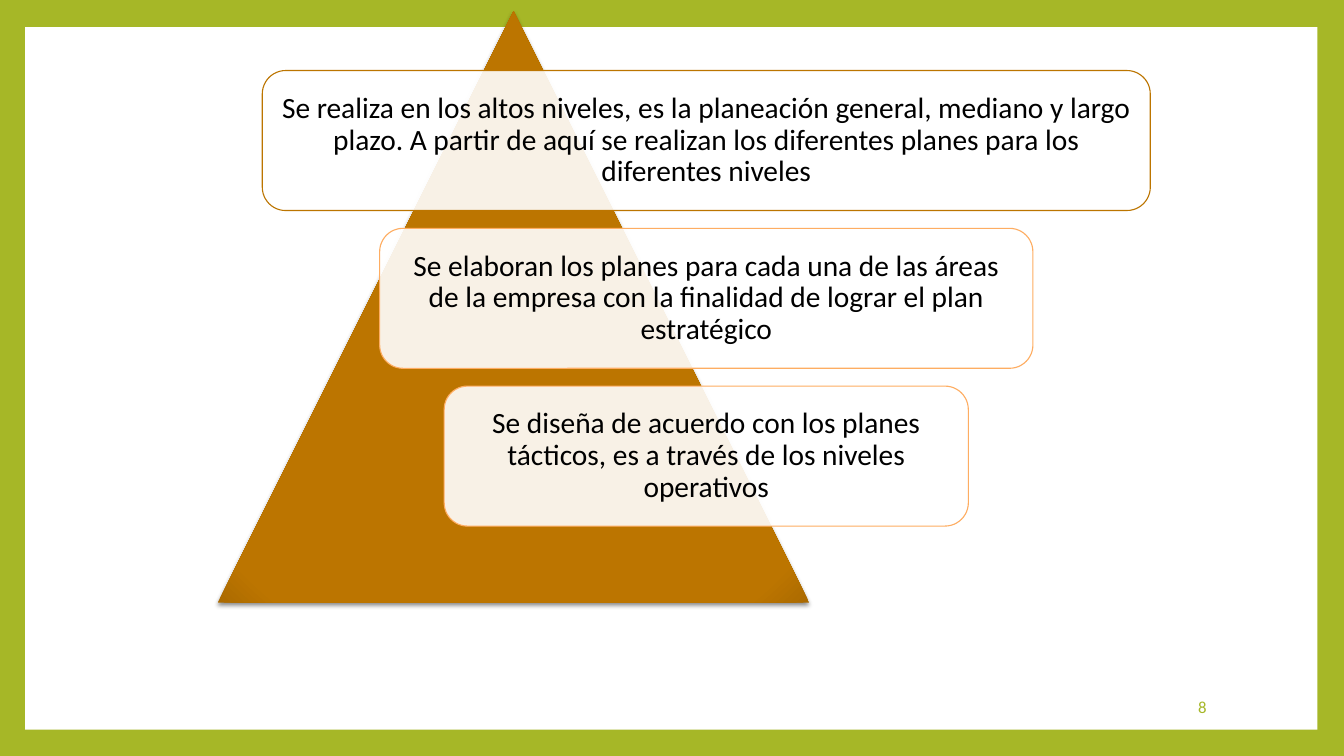
from lxml import etree
from pptx import Presentation
from pptx.dml.color import RGBColor
from pptx.enum.shapes import MSO_SHAPE
from pptx.enum.text import MSO_ANCHOR, PP_ALIGN
from pptx.oxml import parse_xml
from pptx.oxml.ns import qn
from pptx.util import Pt

RECTANGLE = MSO_SHAPE.RECTANGLE
TRIANGLE = MSO_SHAPE.ISOSCELES_TRIANGLE
ROUNDED = MSO_SHAPE.ROUNDED_RECTANGLE
MIDDLE = MSO_ANCHOR.MIDDLE
CENTER, RIGHT = PP_ALIGN.CENTER, PP_ALIGN.RIGHT

FONT = "Calibri"
GREEN, WHITE, BLACK = "A6B727", "FFFFFF", "000000"
BROWN, DARK_BROWN, ORANGE = "BC7500", "AB6A00", "FEAD62"
A_NS = 'xmlns:a="http://schemas.openxmlformats.org/drawingml/2006/main"'

# Planning levels: text, box width, outline
LEVELS = [
    ("Se realiza en los altos niveles, es la planeación general, mediano y "
     "largo plazo. A partir de aquí se realizan los diferentes planes para "
     "los diferentes niveles", 634.3, BROWN),
    ("Se elaboran los planes para cada una de las áreas de la empresa con la "
     "finalidad de lograr el plan estratégico", 466.6, ORANGE),
    ("Se diseña de acuerdo con los planes tácticos, es a través de los "
     "niveles operativos", 374.4, ORANGE),
]
LEVELS_CENTER, LEVELS_TOP = 504.5, 50.4
LEVEL_HEIGHT, LEVEL_PITCH = 100, 112.7


def color(hex_code):
    return RGBColor.from_string(hex_code)


def add_filled(slide, preset, left, top, width, height, fill):
    shape = slide.shapes.add_shape(
        preset, Pt(left), Pt(top), Pt(width), Pt(height))
    shape.shadow.inherit = False
    shape.fill.solid()
    shape.fill.fore_color.rgb = color(fill)
    shape.line.fill.background()
    return shape


def write(frame, text, size, hex_code, alignment):
    frame.word_wrap = True
    frame.vertical_anchor = MIDDLE
    frame.text = text
    paragraph = frame.paragraphs[0]
    paragraph.alignment = alignment
    font = paragraph.runs[0].font
    font.name, font.size = FONT, Pt(size)
    font.color.rgb = color(hex_code)
    return paragraph


def add_pyramid(slide):
    pyramid = add_filled(slide, TRIANGLE, 155.6, 7.9, 422.6, 422.6, BROWN)
    properties = pyramid.fill._xPr
    # Circular gradient, darker at the lower corners
    gradient = parse_xml(
        f'<a:gradFill {A_NS} rotWithShape="1"><a:gsLst>'
        f'<a:gs pos="0"><a:srgbClr val="{BROWN}"/></a:gs>'
        f'<a:gs pos="90000"><a:srgbClr val="{BROWN}"/></a:gs>'
        f'<a:gs pos="100000"><a:srgbClr val="{DARK_BROWN}"/></a:gs></a:gsLst>'
        '<a:path path="circle"><a:fillToRect l="100000" t="100000" '
        'r="100000" b="100000"/></a:path></a:gradFill>')
    properties.replace(properties.find(qn("a:solidFill")), gradient)
    # Soft shadow below
    shadow = etree.SubElement(
        properties.find(qn("a:effectLst")), qn("a:outerShdw"),
        blurRad=str(Pt(3)), dist=str(Pt(2)), dir="5400000", rotWithShape="0")
    shade = etree.SubElement(shadow, qn("a:srgbClr"), val=BLACK)
    etree.SubElement(shade, qn("a:alpha"), val="45000")


def add_level(slide, row, text, width, outline):
    level = add_filled(slide, ROUNDED, LEVELS_CENTER - width / 2,
                       LEVELS_TOP + row * LEVEL_PITCH, width, LEVEL_HEIGHT,
                       WHITE)
    white = level.fill._xPr.find(qn("a:solidFill")).find(qn("a:srgbClr"))
    etree.SubElement(white, qn("a:alpha"), val="90000")
    level.line.color.rgb = color(outline)
    level.line.width = Pt(0.79)
    frame = level.text_frame
    frame.margin_left = frame.margin_right = Pt(6.5)
    frame.margin_top = frame.margin_bottom = Pt(6.5)
    write(frame, text, 21, BLACK, CENTER).line_spacing = 0.9


def add_page_number(slide, number):
    box = slide.shapes.add_textbox(Pt(734.4), Pt(490.3), Pt(134.6), Pt(28.8))
    write(box.text_frame, number, 12, GREEN, RIGHT)


def main():
    presentation = Presentation()
    presentation.slide_width, presentation.slide_height = Pt(960), Pt(540)
    slide = presentation.slides.add_slide(presentation.slide_layouts[6])

    # Green frame around a white page
    slide.background.fill.solid()
    slide.background.fill.fore_color.rgb = color(GREEN)
    add_filled(slide, RECTANGLE, 18, 19.4, 923, 501.8, WHITE)

    # Pyramid with its planning levels
    add_pyramid(slide)
    for row, (text, width, outline) in enumerate(LEVELS):
        add_level(slide, row, text, width, outline)

    add_page_number(slide, "8")
    presentation.save("out.pptx")


if __name__ == "__main__":
    main()
